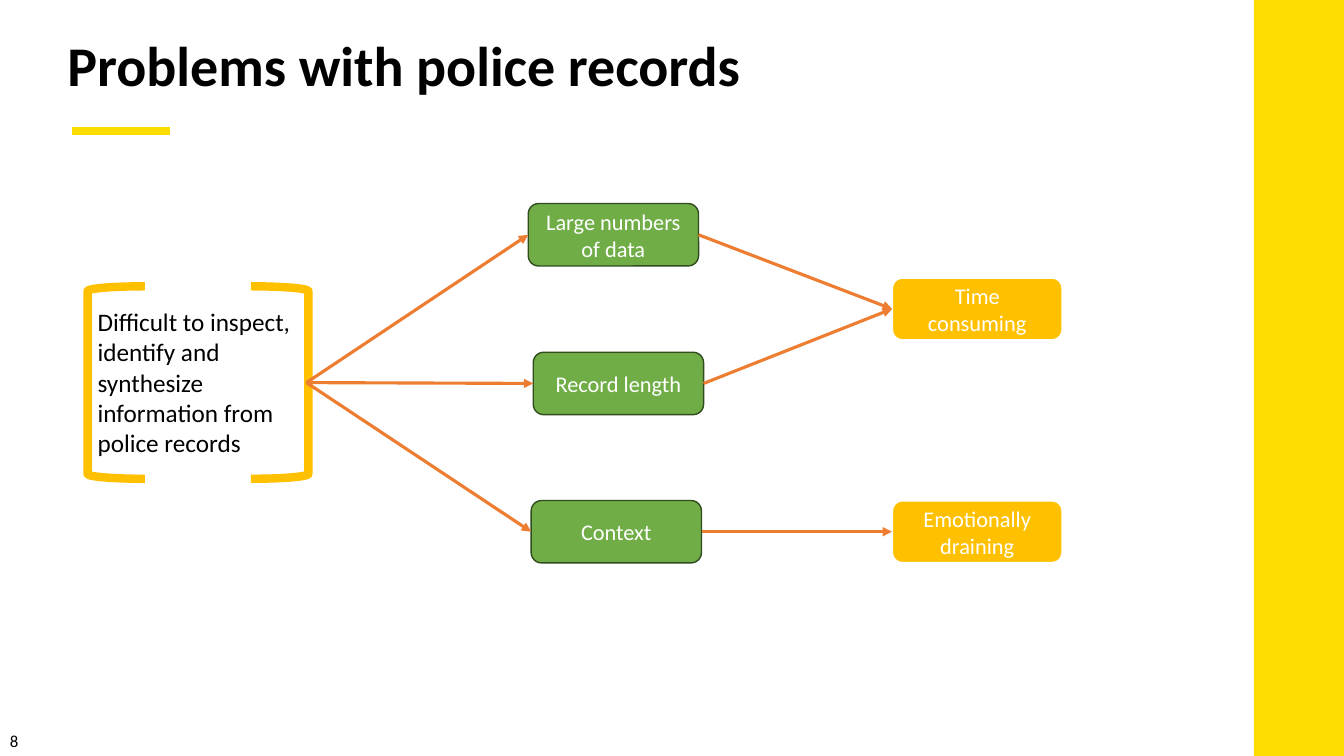
from lxml import etree
from pptx import Presentation
from pptx import util as u
from pptx.dml.color import RGBColor
from pptx.enum import shapes, text
from pptx.oxml import ns

Pt = u.Pt
FONT = "Calibri"
COLOURS = {
    "band": "FFDC00",
    "amber": "FFC000",
    "green": "70AD47",
    "dark green": "314C1F",
    "orange": "ED7D31",
    "black": "000000",
    "white": "FFFFFF",
}


def colour(name):
    """Return the named colour."""
    return RGBColor.from_string(COLOURS[name])


def write(frame, lines, size, ink="black", align=text.PP_ALIGN.LEFT, bold=False):
    """Fill a text frame with one paragraph per line."""
    frame.text = "\n".join(lines)
    for paragraph in frame.paragraphs:
        paragraph.alignment = align
        paragraph.line_spacing = 1.0
        font = paragraph.font
        font.name, font.size, font.bold = FONT, Pt(size), bold
        font.color.rgb = colour(ink)


def add_title(slide, wording):
    """Place and format the slide title."""
    title = slide.shapes.title
    title.left, title.top, title.width, title.height = Pt(41), Pt(18), Pt(900), Pt(55.5)
    frame = title.text_frame
    frame.auto_size = text.MSO_AUTO_SIZE.NONE
    frame.vertical_anchor = text.MSO_ANCHOR.TOP
    write(frame, [wording], 40, bold=True)


def add_label(slide, box, lines, size, wrap=True):
    """Add a plain text box."""
    frame = slide.shapes.add_textbox(*map(Pt, box)).text_frame
    frame.word_wrap = wrap
    write(frame, lines, size)


def add_outline(slide, preset, box, fill=None, line=None, weight=1):
    """Add a preset shape with optional fill and line."""
    shape = slide.shapes.add_shape(preset, *map(Pt, box))
    shape.shadow.inherit = False
    if fill:
        shape.fill.solid()
        shape.fill.fore_color.rgb = colour(fill)
    else:
        shape.fill.background()
    if line:
        shape.line.color.rgb = colour(line)
        shape.line.width = Pt(weight)
    else:
        shape.line.fill.background()
    return shape


def add_node(slide, wording, left, top, fill, line, weight):
    """Add a rounded box with a centred caption."""
    node = add_outline(slide, shapes.MSO_SHAPE.ROUNDED_RECTANGLE,
                       (left, top, 121.7, 44.6), fill, line, weight)
    node.text_frame.word_wrap = True
    node.text_frame.vertical_anchor = text.MSO_ANCHOR.MIDDLE
    write(node.text_frame, [wording], 16, "white", text.PP_ALIGN.CENTER)
    return node


def add_line(slide, start, end, ink, weight):
    """Add a straight line without shadow."""
    line = slide.shapes.add_connector(shapes.MSO_CONNECTOR.STRAIGHT,
                                      *map(Pt, (*start, *end)))
    line.line.color.rgb = colour(ink)
    line.line.width = Pt(weight)
    etree.SubElement(line._element.spPr, ns.qn("a:effectLst"))
    return line


def add_arrow(slide, target, source=None, start=(0, 0)):
    """Add an arrow to a node from another node or a point."""
    arrow = add_line(slide, start, start, "orange", 2.25)
    if source is not None:
        arrow.begin_connect(source, 3)
    arrow.end_connect(target, 1)
    etree.SubElement(arrow.line._get_or_add_ln(), ns.qn("a:tailEnd"), type="triangle")


def main():
    """Build the slide and save it."""
    deck = Presentation()
    deck.slide_width, deck.slide_height = Pt(960), Pt(540)
    slide = deck.slides.add_slide(deck.slide_layouts[5])

    add_outline(slide, shapes.MSO_SHAPE.RECTANGLE, (895.7, 0, 64.3, 540), "band")
    add_title(slide, "Problems with police records")
    add_line(slide, (51.1, 93.6), (121.7, 93.6), "band", 6)

    for bracket, left in ((shapes.MSO_SHAPE.LEFT_BRACKET, 62.6),
                          (shapes.MSO_SHAPE.RIGHT_BRACKET, 179.3)):
        add_outline(slide, bracket, (left, 204.5, 41, 137.5), line="amber", weight=6)
    add_label(slide, (62.6, 215.3, 157, 116.6),
              ["Difficult to inspect, identify and",
               "synthesize information from",
               "police records"], 18)

    causes = [add_node(slide, wording, left, top, "green", "dark green", 1)
              for wording, left, top in (("Large numbers of data", 377.3, 145.4),
                                         ("Record length", 380.9, 251.6),
                                         ("Context", 379.4, 357.5))]
    slow, draining = [add_node(slide, wording, 637.2, top, "amber", "white", 1.5)
                      for wording, top in (("Time consuming", 198.4),
                                           ("Emotionally draining", 357.5))]

    for cause, outcome in zip(causes, (slow, slow, draining)):
        add_arrow(slide, cause, start=(218.9, 273.3))
        add_arrow(slide, outcome, source=cause)

    add_label(slide, (0, 518.4, 20.9, 21.6), ["8"], 12, wrap=False)
    deck.save("out.pptx")


if __name__ == "__main__":
    main()
